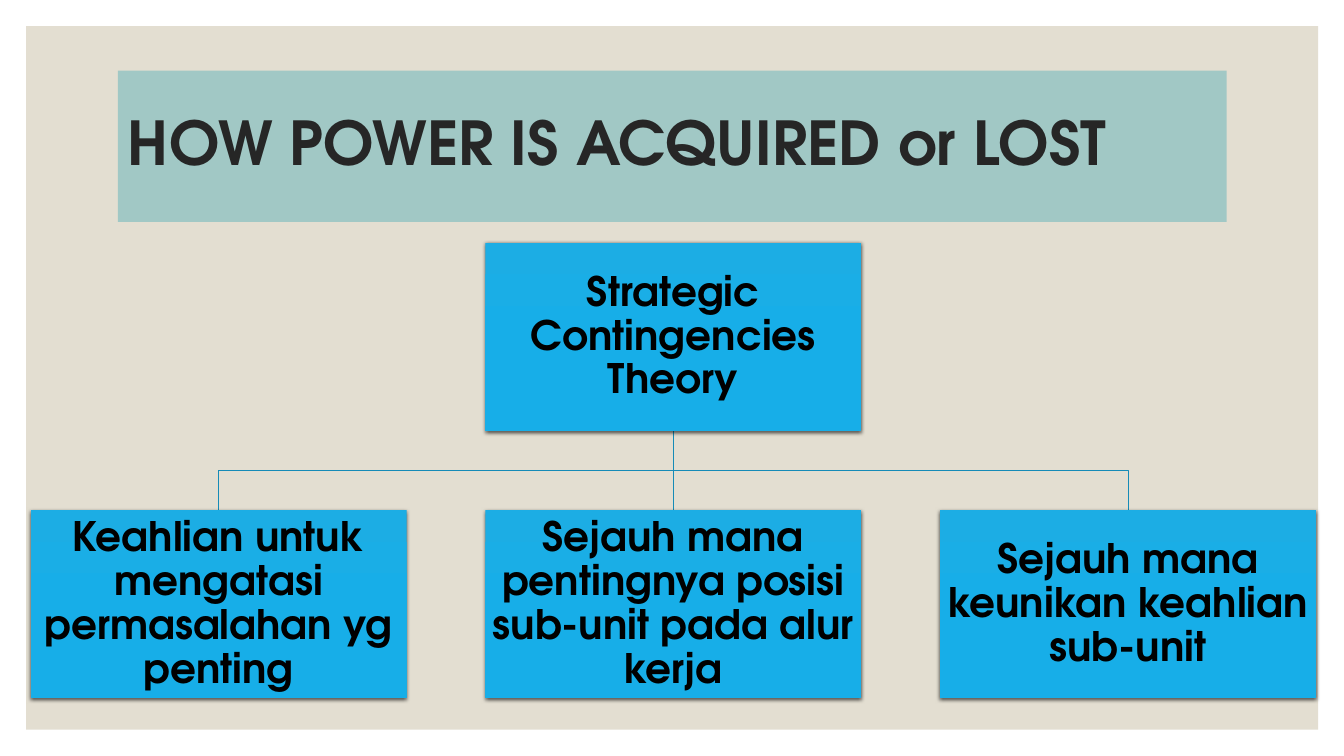
from dataclasses import dataclass
from lxml.etree import SubElement
from pptx import Presentation
from pptx.dml.color import RGBColor as Color
from pptx.enum.shapes import MSO_CONNECTOR as Connector, MSO_SHAPE as Preset
from pptx.enum.text import MSO_ANCHOR as Anchor, MSO_AUTO_SIZE as AutoSize, PP_ALIGN as Align
from pptx.oxml.ns import qn
from pptx.util import Cm, Pt


@dataclass(frozen=True)
class Theme:
    font: str = "TeX Gyre Adventor"
    panel: str = "E3DED1"
    banner: str = "A1C8C5"
    heading: str = "262626"
    box_top: str = "1CADE4"
    box_bottom: str = "17AEE8"
    box_text: str = "000000"
    line: str = "168BB7"
    heading_size: float = 43.2
    box_size: float = 29
    line_width: float = 0.5


def write_text(shape, text, *, font, size, color, align, inset=None):
    frame = shape.text_frame
    frame.word_wrap = True
    frame.auto_size = AutoSize.NONE
    frame.vertical_anchor = Anchor.MIDDLE
    if inset is not None:
        frame.margin_left = frame.margin_right = Cm(inset)
        frame.margin_top = frame.margin_bottom = Cm(inset)
    para = frame.paragraphs[0]
    para.alignment = align
    para.line_spacing = 0.9
    span = para.add_run()
    span.text = text
    span.font.name = font
    span.font.size = Pt(size)
    span.font.bold = True
    span.font.color.rgb = Color.from_string(color)


def add_shadow(shape):
    effects = SubElement(shape.element.spPr, qn("a:effectLst"))
    shadow = SubElement(effects, qn("a:outerShdw"), blurRad=str(Pt(3)), dist=str(Pt(1)),
                        dir="5400000", algn="ctr", rotWithShape="0")
    tint = SubElement(shadow, qn("a:srgbClr"), val="000000")
    SubElement(tint, qn("a:alpha"), val="63000")


class SlideBuilder:
    def __init__(self, slide, theme):
        self.slide = slide
        self.theme = theme

    def title(self, text, left, top, width, height):
        title = self.slide.shapes.title
        title.left, title.top, title.width, title.height = map(Cm, (left, top, width, height))
        title.fill.solid()
        title.fill.fore_color.rgb = Color.from_string(self.theme.banner)
        write_text(title, text, font=self.theme.font, size=self.theme.heading_size,
                   color=self.theme.heading, align=Align.LEFT)

    def rectangle(self, left, top, width, height):
        shape = self.slide.shapes.add_shape(Preset.RECTANGLE, *map(Cm, (left, top, width, height)))
        shape.line.fill.background()
        return shape

    def panel(self, left, top, width, height):
        panel = self.rectangle(left, top, width, height)
        panel.shadow.inherit = False
        panel.fill.solid()
        panel.fill.fore_color.rgb = Color.from_string(self.theme.panel)
        self.slide.shapes.title.element.addprevious(panel.element)

    def box(self, text, left, top, width, height):
        box = self.rectangle(left, top, width, height)
        box.fill.gradient()
        box.fill.gradient_angle = 270
        shades = (0, self.theme.box_top), (0.5, self.theme.box_bottom)
        for stop, (position, color) in zip(box.fill.gradient_stops, shades):
            stop.position = position
            stop.color.rgb = Color.from_string(color)
        add_shadow(box)
        write_text(box, text, font=self.theme.font, size=self.theme.box_size,
                   color=self.theme.box_text, align=Align.CENTER, inset=0.05)

    def style_line(self, line):
        line.color.rgb = Color.from_string(self.theme.line)
        line.width = Pt(self.theme.line_width)

    def straight(self, x, top, bottom):
        link = self.slide.shapes.add_connector(Connector.STRAIGHT, Cm(x), Cm(top), Cm(x), Cm(bottom))
        self.style_line(link.line)
        SubElement(link.element.spPr, qn("a:effectLst"))

    def branch(self, start, end, top, bottom):
        middle = (top + bottom) / 2
        builder = self.slide.shapes.build_freeform(Cm(start), Cm(top))
        corners = (start, middle), (end, middle), (end, bottom)
        builder.add_line_segments([(Cm(x), Cm(y)) for x, y in corners], close=False)
        outline = builder.convert_to_shape()
        outline.fill.background()
        outline.shadow.inherit = False
        self.style_line(outline.line)


def main():
    deck = Presentation()
    deck.slide_width, deck.slide_height = Cm(33.87), Cm(19.05)
    page = SlideBuilder(deck.slides.add_slide(deck.slide_layouts[5]), Theme())
    page.panel(0.66, 0.66, 32.56, 17.73)
    page.title("HOW POWER IS ACQUIRED or LOST", 2.97, 1.78, 27.94, 3.81)

    width, height, step = 9.48, 4.74, 11.46
    root_top, factor_top = 6.12, 12.86
    lefts = [0.77 + step * column for column in range(3)]
    centers = [left + width / 2 for left in lefts]
    root_bottom = root_top + height
    page.branch(centers[1], centers[2], root_bottom, factor_top)
    page.straight(centers[1], root_bottom, factor_top)
    page.branch(centers[1], centers[0], root_bottom, factor_top)

    page.box("Strategic Contingencies Theory", lefts[1], root_top, width, height)
    factors = (
        "Keahlian untuk mengatasi permasalahan yg penting",
        "Sejauh mana pentingnya posisi sub-unit pada alur kerja",
        "Sejauh mana keunikan keahlian sub-unit",
    )
    for left, factor in zip(lefts, factors):
        page.box(factor, left, factor_top, width, height)
    deck.save("out.pptx")


if __name__ == "__main__":
    main()
